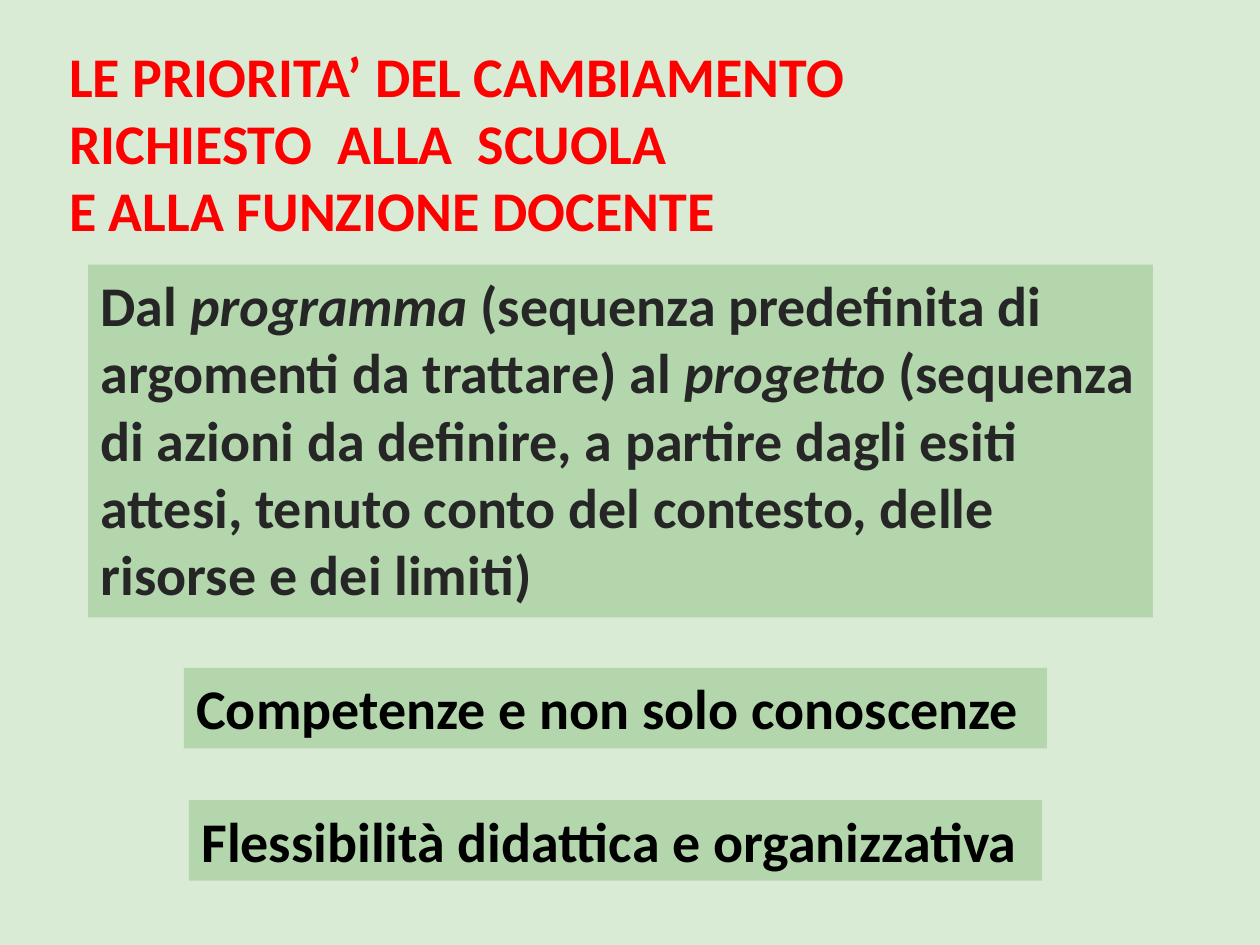
from pptx import Presentation
from pptx.dml.color import RGBColor
from pptx.enum.text import MSO_ANCHOR, MSO_AUTO_SIZE, PP_ALIGN
from pptx.util import Inches, Pt

COLORS = {
    "background": "D9EAD5",
    "panel": "B3D6AC",
    "title": "FF0000",
    "body": "262626",
    "point": "000000",
}


def add_text(page, paragraphs, left, top, width, height, color, fill=None):
    box = page.shapes.add_textbox(Inches(left), Inches(top), Inches(width), Inches(height))
    if fill:
        box.fill.solid()
        box.fill.fore_color.rgb = RGBColor.from_string(COLORS[fill])
    frame = box.text_frame
    frame.word_wrap = True
    frame.auto_size = MSO_AUTO_SIZE.SHAPE_TO_FIT_TEXT
    frame.vertical_anchor = MSO_ANCHOR.TOP
    for index, pieces in enumerate(paragraphs):
        para = frame.paragraphs[0] if index == 0 else frame.add_paragraph()
        para.alignment = PP_ALIGN.LEFT
        for text, italic in pieces:
            span = para.add_run()
            span.text = text
            span.font.name = "Calibri"
            span.font.size = Pt(32)
            span.font.bold = True
            span.font.italic = italic
            span.font.color.rgb = RGBColor.from_string(COLORS[color])
    return box


deck = Presentation()
deck.slide_width = Inches(10)
deck.slide_height = Inches(7.5)
page = deck.slides.add_slide(deck.slide_layouts[6])
page.background.fill.solid()
page.background.fill.fore_color.rgb = RGBColor.from_string(COLORS["background"])

title_lines = [
    "LE PRIORITA’ DEL CAMBIAMENTO",
    "RICHIESTO  ALLA  SCUOLA",
    "E ALLA FUNZIONE DOCENTE",
]
add_text(page, [[(line, False)] for line in title_lines], 0.45, 0.28, 8.96, 1.72, color="title")

definition = [
    ("Dal ", False),
    ("programma", True),
    (" (sequenza predefinita di argomenti da trattare) al ", False),
    ("progetto", True),
    (" (sequenza di azioni da definire, a partire dagli esiti attesi, "
     "tenuto conto del contesto, delle risorse e dei limiti)", False),
]
add_text(page, [definition], 0.7, 2.1, 8.45, 2.8, color="body", fill="panel")

points = [
    ("Competenze e non solo conoscenze", 1.46, 5.3, 6.85),
    ("Flessibilità didattica e organizzativa", 1.5, 6.35, 6.77),
]
for text, left, top, width in points:
    add_text(page, [[(text, False)]], left, top, width, 0.64, color="point", fill="panel")

deck.save("out.pptx")
